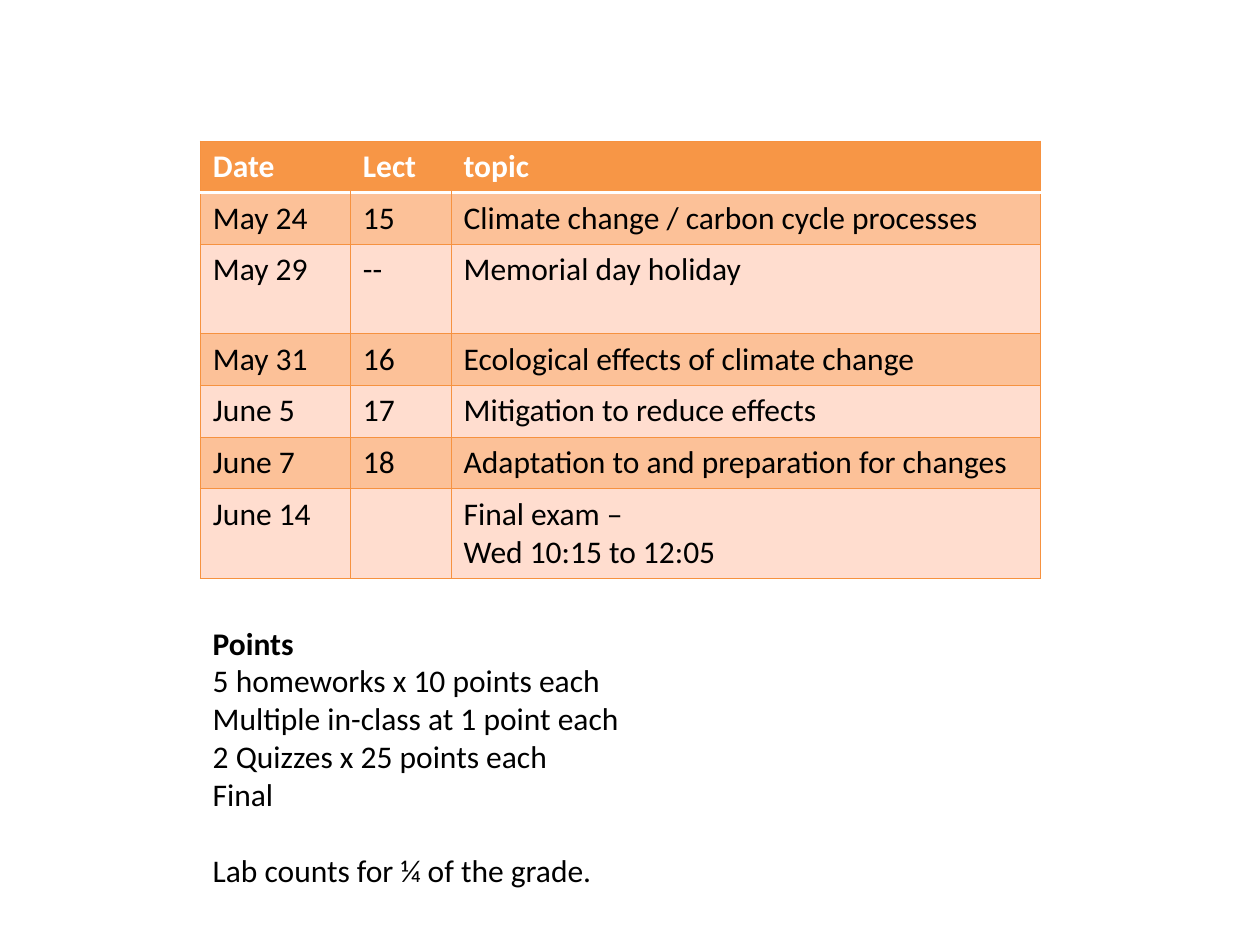
import pptx
import pptx.util
import pptx.dml.color
import pptx.oxml
import pptx.oxml.ns

Inches, Pt = pptx.util.Inches, pptx.util.Pt

COLORS = {
    "head": "F79646",
    "dark": "FCC198",
    "light": "FFDDCF",
    "line": "F69240",
    "white": "FFFFFF",
    "text": "000000",
}

HEAD = ["Date", "Lect", "topic"]
ROWS = [
    ["May 24", "15", "Climate change / carbon cycle processes"],
    ["May 29", "--", "Memorial day holiday"],
    ["May 31", "16", "Ecological effects of climate change"],
    ["June 5", "17", "Mitigation to reduce effects"],
    ["June 7", "18", "Adaptation to and preparation for changes"],
    ["June 14", "", "Final exam –\nWed 10:15 to 12:05"],
]
POINTS = [
    "Points",
    "5 homeworks x 10 points each",
    "Multiple in-class at 1 point each",
    "2 Quizzes x 25 points each",
    "Final",
    "Lab counts for ¼ of the grade.",
]
COLS = [1.19, 0.8, 4.68]
LOW, TALL = 0.41, 0.71
TALL_ROWS = {2, 6}


class Deck:
    def __init__(self, font="Calibri", size=18):
        self.font, self.size = font, size
        self.prs = pptx.Presentation()
        self.prs.slide_width = Inches(10)
        self.prs.slide_height = Inches(7.5)
        self.slide = self.prs.slides.add_slide(self.prs.slide_layouts[6])

    def rgb(self, name):
        return pptx.dml.color.RGBColor.from_string(COLORS[name])

    def fill(self, frame, lines, color="text", bold=()):
        """Fill a frame with one run per line; bold holds line numbers."""
        for i, line in enumerate(lines):
            para = frame.paragraphs[0] if i == 0 else frame.add_paragraph()
            para.font.size = Pt(self.size)
            if not line:
                continue
            run = para.add_run()
            run.text = line
            run.font.name, run.font.size = self.font, Pt(self.size)
            run.font.bold = i in bold
            run.font.color.rgb = self.rgb(color)

    def edge(self, cell, sides):
        """Draw cell borders; sides maps L, R, T, B to (color, points) or None."""
        props = cell._tc.get_or_add_tcPr()
        for i, side in enumerate("LRTB"):
            style = sides[side]
            width = int(Pt(style[1])) if style else 0
            fill = (f'<a:solidFill><a:srgbClr val="{COLORS[style[0]]}"/></a:solidFill>'
                    if style else "<a:noFill/>")
            props.insert(i, pptx.oxml.parse_xml(
                f'<a:ln{side} {pptx.oxml.ns.nsdecls("a")} w="{width}">{fill}</a:ln{side}>'))

    def table(self, x, y, cols, rows):
        highs = [TALL if r in TALL_ROWS else LOW for r in range(len(rows))]
        grid = self.slide.shapes.add_table(
            len(rows), len(cols), Inches(x), Inches(y),
            Inches(sum(cols)), Inches(sum(highs))).table
        for col, wide in zip(grid.columns, cols):
            col.width = Inches(wide)
        thin, thick = ("line", 0.75), ("white", 2)
        for r, row in enumerate(rows):
            grid.rows[r].height = Inches(highs[r])
            head = r == 0
            tone = "head" if head else "dark" if r % 2 else "light"
            for c, text in enumerate(row):
                cell = grid.cell(r, c)
                cell.fill.solid()
                cell.fill.fore_color.rgb = self.rgb(tone)
                self.fill(cell.text_frame, text.split("\n"),
                          "white" if head else "text", {0} if head else ())
                sides = dict.fromkeys("LRTB", thin)
                if head:
                    sides["B"] = thick
                    if c > 0:
                        sides["L"] = None
                    if c < len(row) - 1:
                        sides["R"] = None
                elif r == 1:
                    sides["T"] = thick
                self.edge(cell, sides)

    def text(self, x, y, w, h, lines, bold=()):
        frame = self.slide.shapes.add_textbox(
            Inches(x), Inches(y), Inches(w), Inches(h)).text_frame
        frame.word_wrap = True
        self.fill(frame, lines, bold=bold)
        return frame


def main():
    deck = Deck()

    # Schedule
    deck.table(1.59, 1.12, COLS, [HEAD] + ROWS)

    # Grading, with the lab note set one line apart
    frame = deck.text(1.59, 4.9, 4.97, 2.22, POINTS, bold={0})
    frame.paragraphs[-1].space_before = Pt(22)

    deck.prs.save("out.pptx")


if __name__ == "__main__":
    main()
